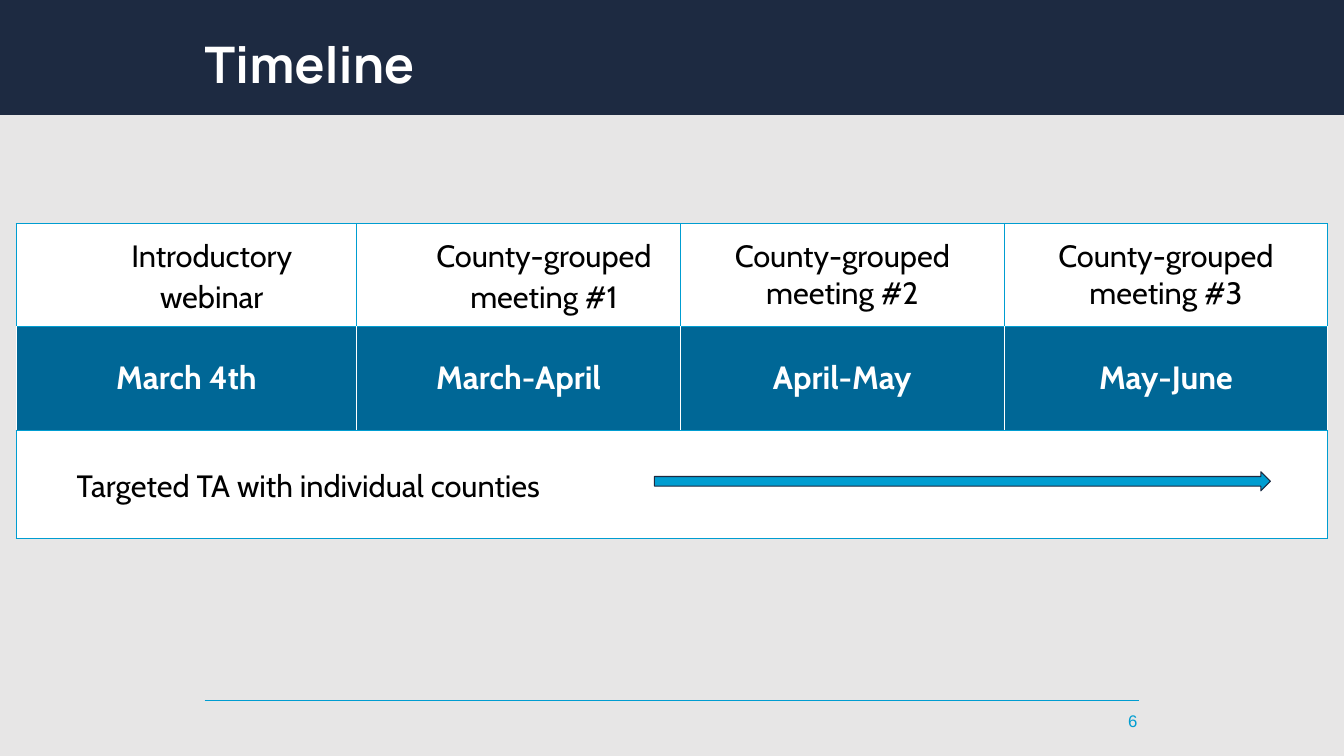
from lxml.etree import SubElement
from pptx import Presentation
from pptx.dml.color import RGBColor
from pptx.enum.shapes import MSO_CONNECTOR, MSO_SHAPE
from pptx.enum.text import MSO_ANCHOR, MSO_AUTO_SIZE, PP_ALIGN
from pptx.oxml import parse_xml
from pptx.oxml.ns import nsdecls, qn
from pptx.util import Inches, Pt

NAVY, BLUE, TEAL = "1D2A41", "009DD1", "006796"
WHITE, BLACK, GREY = "FFFFFF", "000000", "E7E6E6"
STEPS = [
    ("Introductory webinar", "March 4th"),
    ("County-grouped meeting #1", "March-April"),
    ("County-grouped meeting #2", "April-May"),
    ("County-grouped meeting #3", "May-June"),
]
WIDTHS = [3.38, 3.21, 3.21, 3.21]
HEIGHTS = [1.02, 1.03, 1.07]


def paint(fill, color):
    fill.solid()
    fill.fore_color.rgb = RGBColor.from_string(color)


def write(frame, text, font, size, color, align, bold=False, space=1.0):
    frame.text = text
    frame.word_wrap = True
    para = frame.paragraphs[0]
    para.alignment = align
    para.line_spacing = space
    style = para.runs[0].font
    style.name, style.size, style.bold = font, Pt(size), bold
    style.color.rgb = RGBColor.from_string(color)
    return para


def add_shape(slide, kind, box, color, edge=None):
    shape = slide.shapes.add_shape(kind, *map(Inches, box))
    shape.shadow.inherit = False
    paint(shape.fill, color)
    if edge:
        paint(shape.line.fill, edge)
        shape.line.width = Pt(0.75)
    else:
        shape.line.fill.background()
    return shape


def add_rule(slide, left, right, top):
    ends = map(Inches, (left, top, right, top))
    rule = slide.shapes.add_connector(MSO_CONNECTOR.STRAIGHT, *ends)
    paint(rule.line.fill, BLUE)
    rule.line.width = Pt(0.75)
    SubElement(rule._element.spPr, qn("a:effectLst"))


def add_title(slide, text):
    title = slide.shapes.title
    title.left, title.top = Inches(1.93), Inches(0.23)
    title.width, title.height = Inches(9.45), Inches(0.68)
    frame = title.text_frame
    frame.auto_size = MSO_AUTO_SIZE.NONE
    frame.vertical_anchor = MSO_ANCHOR.MIDDLE
    write(frame, text, "Manrope", 36, WHITE, PP_ALIGN.LEFT, True, 1.2)


def add_number(slide, text):
    box = slide.shapes.add_textbox(*map(Inches, (9.42, 6.95, 1.96, 0.4)))
    box.text_frame.vertical_anchor = MSO_ANCHOR.MIDDLE
    write(box.text_frame, text, "Arial", 12, BLUE, PP_ALIGN.RIGHT)


def style_cell(cell, fill, side):
    paint(cell.fill, fill)
    cell.vertical_anchor = MSO_ANCHOR.MIDDLE
    cell.margin_left = cell.margin_right = Inches(0.1)
    cell.margin_top = cell.margin_bottom = Inches(0.1)
    props = cell._tc.get_or_add_tcPr()
    edges = {"lnL": side, "lnR": side, "lnT": BLUE, "lnB": BLUE}
    for spot, (tag, color) in enumerate(edges.items()):
        props.insert(spot, parse_xml(
            f'<a:{tag} {nsdecls("a")} w="{Pt(0.75)}"><a:solidFill>'
            f'<a:srgbClr val="{color}"/></a:solidFill></a:{tag}>'))


def label(cell, text, align, inset):
    space = 1.1 if inset else 1.0
    para = write(cell.text_frame, text, "Cabin", 22, BLACK, align, space=space)
    if inset:
        props = para._p.get_or_add_pPr()
        props.set("marL", str(Inches(0.5)))
        props.set("indent", "0")


def add_plan(slide):
    box = (0.16, 2.22, sum(WIDTHS), sum(HEIGHTS))
    table = slide.shapes.add_table(
        len(HEIGHTS), len(WIDTHS), *map(Inches, box)).table
    table.first_row = table.horz_banding = False
    for col, width in zip(table.columns, WIDTHS):
        col.width = Inches(width)
    looks = [(WHITE, BLUE), (TEAL, WHITE), (WHITE, BLUE)]
    for row, height, look in zip(table.rows, HEIGHTS, looks):
        row.height = Inches(height)
        for cell in row.cells:
            style_cell(cell, *look)
    for col, (event, date) in enumerate(STEPS):
        label(table.cell(0, col), event, PP_ALIGN.CENTER, col < 2)
        write(table.cell(1, col).text_frame, date, "Cabin", 23, WHITE,
              PP_ALIGN.CENTER, True)
    last = table.cell(2, 0)
    last.merge(table.cell(2, len(WIDTHS) - 1))
    label(last, "Targeted TA with individual counties", PP_ALIGN.LEFT, True)


def main():
    deck = Presentation()
    deck.slide_width, deck.slide_height = Inches(13.33), Inches(7.5)
    slide = deck.slides.add_slide(deck.slide_layouts[5])
    paint(slide.background.fill, GREY)
    band = add_shape(slide, MSO_SHAPE.RECTANGLE, (0, 0, 13.33, 1.14), NAVY)
    slide.shapes.title._element.addprevious(band._element)
    add_rule(slide, 2.03, 11.3, 6.95)
    add_number(slide, "6")
    add_title(slide, "Timeline")
    add_plan(slide)
    add_shape(slide, MSO_SHAPE.RIGHT_ARROW, (6.49, 4.68, 6.11, 0.19),
              BLUE, NAVY)
    deck.save("out.pptx")


if __name__ == "__main__":
    main()
